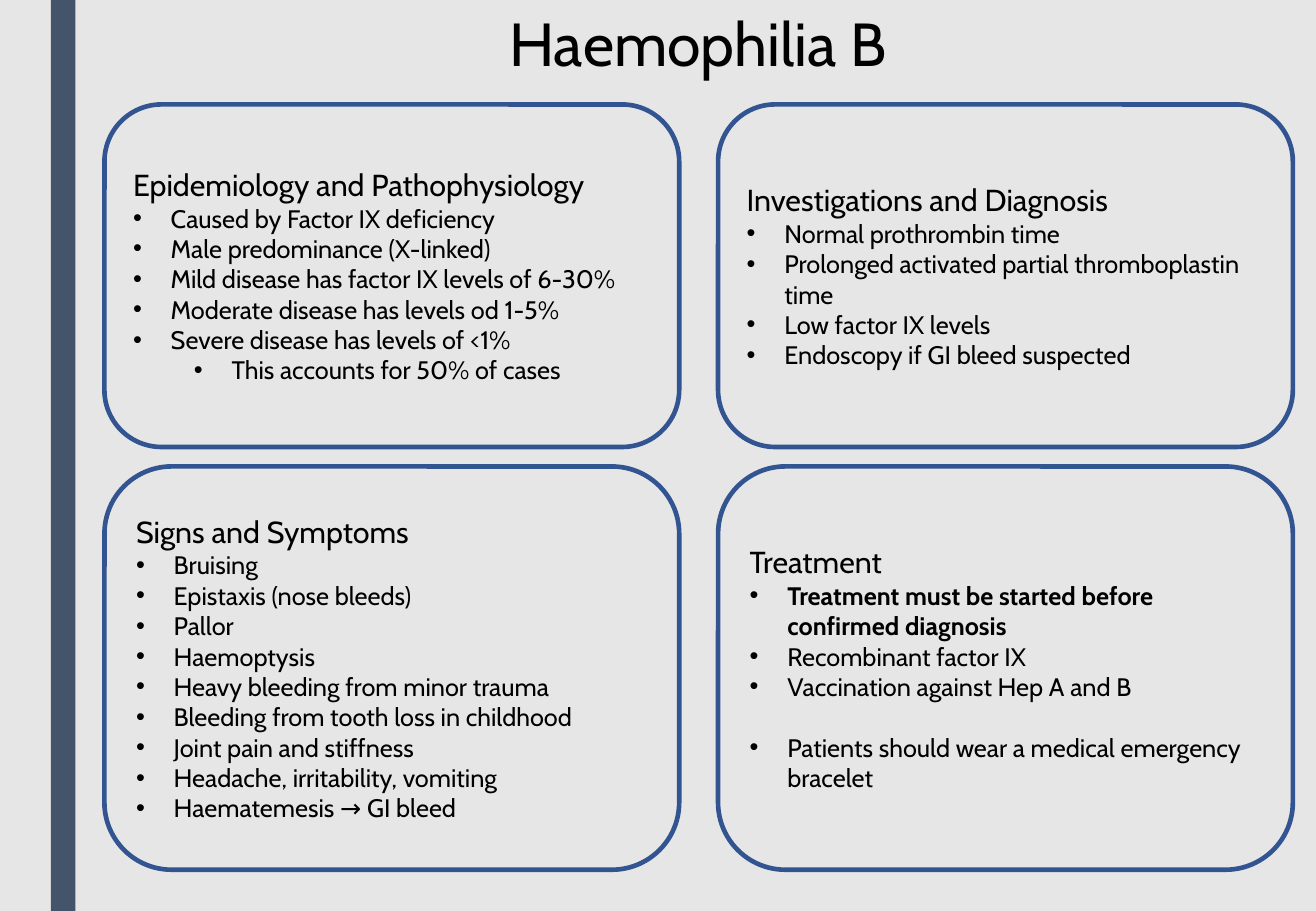
from lxml import etree
from pptx import Presentation
from pptx.dml.color import RGBColor
from pptx.enum.shapes import MSO_SHAPE
from pptx.enum.text import MSO_ANCHOR, PP_ALIGN
from pptx.oxml.ns import qn
from pptx.util import Inches, Pt

RECT, ROUND = MSO_SHAPE.RECTANGLE, MSO_SHAPE.ROUNDED_RECTANGLE
LEFT, CENTER, MIDDLE = PP_ALIGN.LEFT, PP_ALIGN.CENTER, MSO_ANCHOR.MIDDLE

TITLE = "Haemophilia B"
CARDS = [
    ("Epidemiology and Pathophysiology", [
        ("Caused by Factor IX deficiency", {}),
        ("Male predominance (X-linked)", {}),
        ("Mild disease has factor IX levels of 6-30%", {}),
        ("Moderate disease has levels od 1-5%", {}),
        ("Severe disease has levels of <1%", {}),
        ("This accounts for 50% of cases", {"level": 1}),
    ]),
    ("Investigations and Diagnosis", [
        ("Normal prothrombin time", {}),
        ("Prolonged activated partial thromboplastin time", {}),
        ("Low factor IX levels", {}),
        ("Endoscopy if GI bleed suspected", {}),
    ]),
    ("Signs and Symptoms", [
        ("Bruising", {}),
        ("Epistaxis (nose bleeds)", {}),
        ("Pallor", {}),
        ("Haemoptysis", {}),
        ("Heavy bleeding from minor trauma", {}),
        ("Bleeding from tooth loss in childhood", {}),
        ("Joint pain and stiffness", {}),
        ("Headache, irritability, vomiting", {}),
        ("Haematemesis → GI bleed", {}),
    ]),
    ("Treatment", [
        ("Treatment must be started before confirmed diagnosis", {"bold": True}),
        ("Recombinant factor IX", {}),
        ("Vaccination against Hep A and B", {"after": 18}),
        ("Patients should wear a medical emergency bracelet", {}),
    ]),
]
COLORS = {"back": "E7E6E6", "bar": "44546A", "edge": "325491", "text": "000000"}
FONT = "Cabin"
COLS = (0.86, 5.91)
ROWS = ((0.86, 2.82), (3.84, 3.32))
WIDTH, INDENT, STEP = 4.73, 0.31, 0.5


def color(name):
    """Return the named colour."""
    return RGBColor.from_string(COLORS[name])


def write(para, text, size, bold=False, align=LEFT):
    """Put one styled run into a paragraph."""
    para.alignment = align
    run = para.add_run()
    run.text = text
    for key, value in {"name": FONT, "size": Pt(size), "bold": bold}.items():
        setattr(run.font, key, value)
    run.font.color.rgb = color("text")


def bullet(para, level):
    """Give a paragraph a hanging bullet."""
    para.level = level
    props = para._p.get_or_add_pPr()
    props.set("marL", str(Inches(INDENT + STEP * level)))
    props.set("indent", str(-Inches(INDENT)))
    etree.SubElement(props, qn("a:buFont")).set("typeface", "Arial")
    etree.SubElement(props, qn("a:buChar")).set("char", "•")


def add_card(slide, box, head, items):
    """Draw a rounded card with a heading and bullets."""
    card = slide.shapes.add_shape(ROUND, *map(Inches, box))
    card.shadow.inherit = False
    card.fill.background()
    card.line.color.rgb = color("edge")
    card.line.width = Pt(2.75)
    frame = card.text_frame
    for key, value in {"word_wrap": True, "vertical_anchor": MIDDLE}.items():
        setattr(frame, key, value)
    write(frame.paragraphs[0], head, 18)
    for text, style in items:
        para = frame.add_paragraph()
        para.space_after = Pt(style.get("after", 0))
        bullet(para, style.get("level", 0))
        write(para, text, 15, style.get("bold", False))


def main():
    """Build the slide and save it."""
    deck = Presentation()
    deck.slide_width, deck.slide_height = Inches(10.83), Inches(7.5)
    slide = deck.slides.add_slide(deck.slide_layouts[6])
    slide.background.fill.solid()
    slide.background.fill.fore_color.rgb = color("back")

    bar = slide.shapes.add_shape(RECT, *map(Inches, (0.42, 0, 0.2, 7.5)))
    bar.shadow.inherit = False
    bar.fill.solid()
    bar.fill.fore_color.rgb = color("bar")
    bar.line.fill.background()

    title = slide.shapes.add_textbox(*map(Inches, (0.66, 0, 10.17, 0.71)))
    title.text_frame.word_wrap = True
    write(title.text_frame.paragraphs[0], TITLE, 36, align=CENTER)

    for index, (head, items) in enumerate(CARDS):
        row, col = divmod(index, len(COLS))
        top, height = ROWS[row]
        add_card(slide, (COLS[col], top, WIDTH, height), head, items)
    deck.save("out.pptx")


if __name__ == "__main__":
    main()
